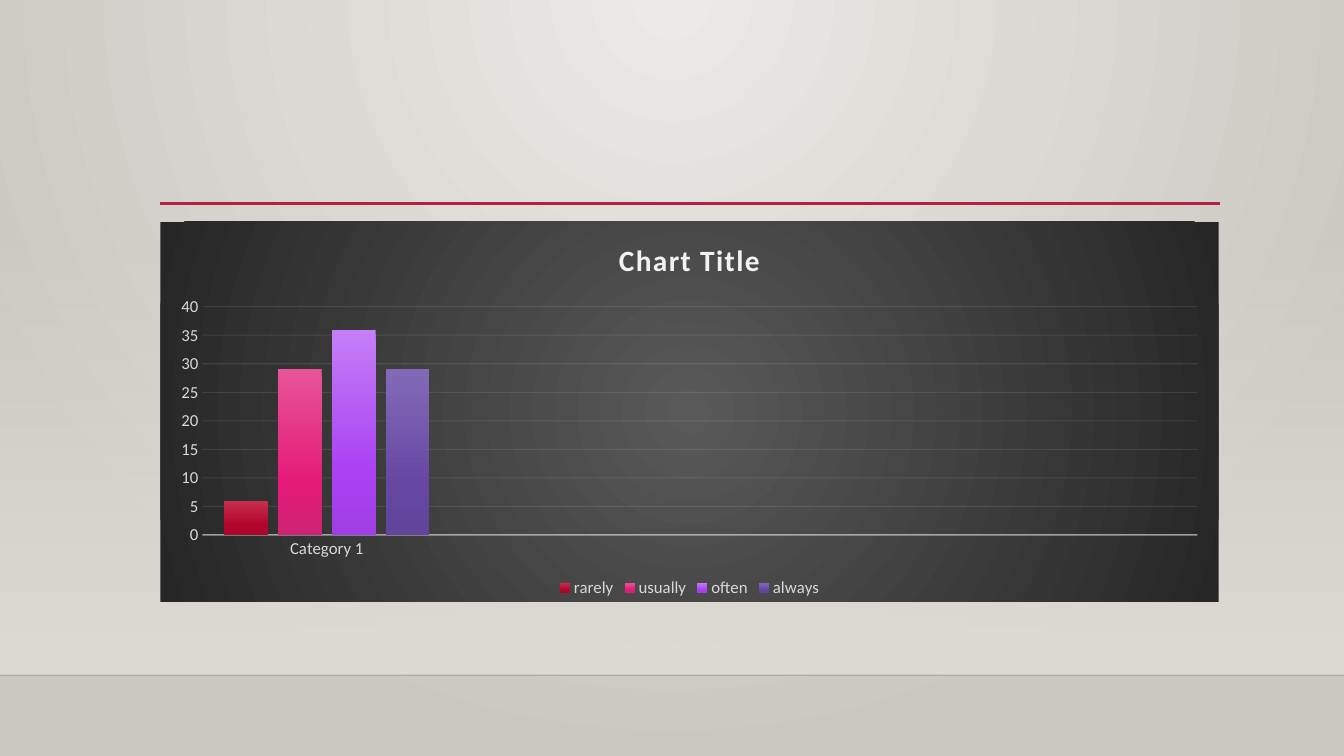
import lxml.etree
import pptx
import pptx.chart.data
import pptx.dml.color
import pptx.enum.chart
import pptx.enum.shapes
import pptx.oxml
import pptx.oxml.ns
import pptx.util

Pt = pptx.util.Pt
qn = pptx.oxml.ns.qn

SLIDE_WIDTH, SLIDE_HEIGHT = 960, 540
FLOOR_TOP = 482.4
CONTENT_LEFT = 114.48
ANSWERS = [
    ("rarely", 6, ("C7304C", "B3062F", "AA062C")),
    ("usually", 29, ("E75597", "E51A79", "CF2374")),
    ("often", 36, ("C57FF7", "AA41F3", "A13FE5")),
    ("always", 29, ("836AB8", "6648A3", "60459A")),
]


def rgb(color):
    """Turn a hex string into a colour."""
    return pptx.dml.color.RGBColor.from_string(color)


def add_alpha(color_element, percent):
    """Set the opacity of a colour element."""
    alpha = lxml.etree.SubElement(color_element, qn("a:alpha"))
    alpha.set("val", str(percent * 1000))


def gradient(stops, center=None):
    """Build a vertical gradient, or a circular one around center (l, t, r, b)."""
    fill = pptx.oxml.parse_xml(f"<a:gradFill {pptx.oxml.ns.nsdecls('a')} rotWithShape='1'/>")
    stop_list = lxml.etree.SubElement(fill, qn("a:gsLst"))
    for position, color, opacity in stops:
        stop = lxml.etree.SubElement(stop_list, qn("a:gs"), pos=str(position * 1000))
        add_alpha(lxml.etree.SubElement(stop, qn("a:srgbClr"), val=color), opacity)
    if center:
        circle = lxml.etree.SubElement(fill, qn("a:path"), path="circle")
        edges = {side: str(share * 1000) for side, share in zip("ltrb", center)}
        lxml.etree.SubElement(circle, qn("a:fillToRect"), **edges)
    else:
        lxml.etree.SubElement(fill, qn("a:lin"), ang="5400000", scaled="0")
    return fill


def paint(fill, owner, new_fill):
    """Give the owner of a fill a gradient."""
    fill.solid()
    solid = owner.find(f".//{qn('a:solidFill')}")
    solid.getparent().replace(solid, new_fill)


def style_line(line, color, width, opacity=100):
    """Set colour, width and opacity of a line."""
    line.color.rgb = rgb(color)
    line.width = Pt(width)
    add_alpha(line._get_or_add_ln().find(f".//{qn('a:srgbClr')}"), opacity)


def add_rule(slide, left, right, top, color, width, opacity=100):
    """Draw a horizontal line without a shadow."""
    rule = slide.shapes.add_connector(
        pptx.enum.shapes.MSO_CONNECTOR.STRAIGHT, Pt(left), Pt(top), Pt(right), Pt(top))
    style_line(rule.line, color, width, opacity)
    lxml.etree.SubElement(rule.element.spPr, qn("a:effectLst"))


def style_font(font, size, color, bold=False):
    """Set the font of a text or a chart part."""
    font.name = "Calibri"
    font.size = Pt(size)
    font.bold = bold
    font.color.rgb = rgb(color)


def write_text(frame, text, size, color, bold=False, spacing=0):
    """Write formatted text into a text frame."""
    run = frame.paragraphs[0].add_run()
    run.text = text
    style_font(run.font, size, color, bold)
    run.font._element.set("spc", str(spacing * 100))


def add_wall(slide):
    """Fill the background and fade in the wall above the floor line."""
    paint(slide.background.fill, slide.element,
          gradient([(0, "ECEAE7", 100), (100, "CAC7C1", 100)], (43, 0, 43, 100)))
    wall = slide.shapes.add_shape(
        pptx.enum.shapes.MSO_SHAPE.RECTANGLE, 0, Pt(159.12), Pt(SLIDE_WIDTH), Pt(323.28))
    wall.shadow.inherit = False
    wall.line.fill.background()
    paint(wall.fill, wall.element, gradient([(0, "DFDBD5", 0), (100, "DFDBD5", 100)]))


def style_axes(chart):
    """Format both axes and the gridlines."""
    for axis in (chart.category_axis, chart.value_axis):
        axis.major_tick_mark = axis.minor_tick_mark = pptx.enum.chart.XL_TICK_MARK.NONE
        axis.has_title = False
        style_font(axis.tick_labels.font, 12, "D9D9D9")
    style_line(chart.category_axis.format.line, "F2F2F2", 1, 54)
    frequency = chart.value_axis
    frequency.minimum_scale, frequency.maximum_scale, frequency.major_unit = 0, 40, 5
    frequency.format.line.fill.background()
    style_line(frequency.major_gridlines.format.line, "F2F2F2", 0.75, 10)


def add_answer_chart(slide):
    """Add the column chart of answers on its dark panel."""
    answers = pptx.chart.data.CategoryChartData(number_format="General")
    answers.categories = ["Category 1", "", "", ""]
    for name, value, _ in ANSWERS:
        answers.add_series(name, [value, None, None, None])
    chart = slide.shapes.add_chart(
        pptx.enum.chart.XL_CHART_TYPE.COLUMN_CLUSTERED,
        Pt(CONTENT_LEFT), Pt(158.4), Pt(756), Pt(271.44), answers).chart
    style_font(chart.font, 10, "000000")
    panel = pptx.oxml.parse_xml(f"<c:spPr {pptx.oxml.ns.nsdecls('c', 'a')}/>")
    panel.append(gradient([(0, "595959", 100), (100, "262626", 100)], (50, 50, 50, 50)))
    outline = lxml.etree.SubElement(panel, qn("a:ln"))
    lxml.etree.SubElement(outline, qn("a:noFill"))
    chart.element.find(qn("c:txPr")).addprevious(panel)

    chart.has_title = True
    write_text(chart.chart_title.text_frame, "Chart Title", size=21, color="F2F2F2",
               bold=True, spacing=1)
    chart.chart_title.include_in_layout = False
    chart.has_legend = True
    chart.legend.position = pptx.enum.chart.XL_LEGEND_POSITION.BOTTOM
    chart.legend.include_in_layout = False
    style_font(chart.legend.font, 12, "D9D9D9")
    style_axes(chart)

    columns = chart.plots[0]
    columns.vary_by_categories = False
    columns.gap_width, columns.overlap = 100, -24
    for series, (_, _, colors) in zip(columns.series, ANSWERS):
        stops = [(position, color, 100) for position, color in zip((0, 69, 100), colors)]
        paint(series.format.fill, series._element, gradient(stops))


def main():
    """Build the slide and save it."""
    deck = pptx.Presentation()
    deck.slide_width, deck.slide_height = Pt(SLIDE_WIDTH), Pt(SLIDE_HEIGHT)
    slide = deck.slides.add_slide(deck.slide_layouts[6])
    add_wall(slide)
    add_rule(slide, 0, SLIDE_WIDTH, FLOOR_TOP, "000001", 1, 20)
    add_rule(slide, CONTENT_LEFT, 871.2, 145.44, "B71E42", 2.5)
    add_answer_chart(slide)
    deck.save("out.pptx")


if __name__ == "__main__":
    main()
